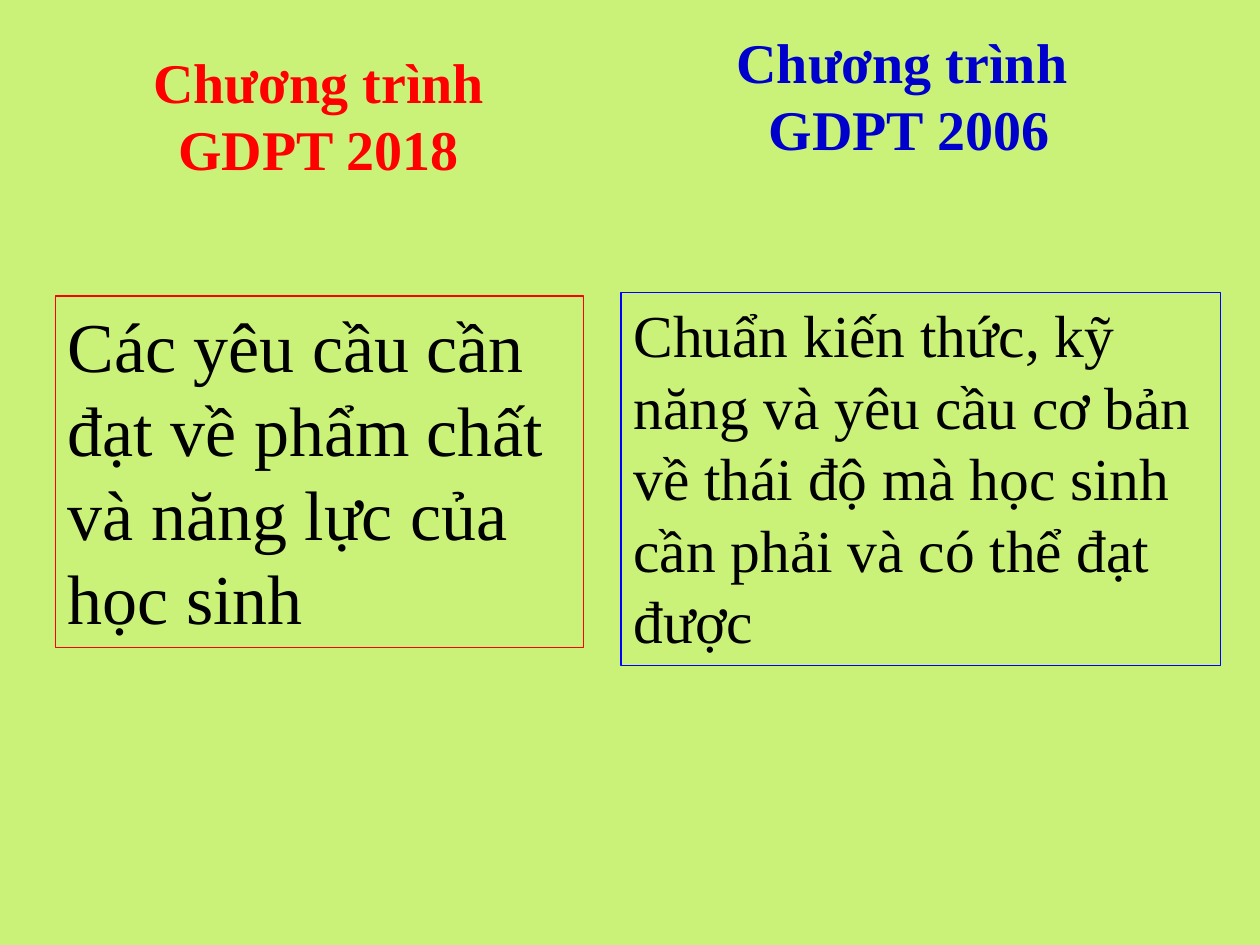
from pptx import Presentation
from pptx.dml.color import RGBColor
from pptx.enum import text
from pptx.util import Inches, Pt


def color(code):
    return RGBColor.from_string(code)


def write(box, lines, align, style):
    """Fill a box with one paragraph per line, all in the same style."""
    frame = box.text_frame
    frame.word_wrap = True
    frame.auto_size = text.MSO_AUTO_SIZE.SHAPE_TO_FIT_TEXT
    frame.vertical_anchor = text.MSO_ANCHOR.TOP
    frame.text = "\n".join(lines)
    for para in frame.paragraphs:
        para.alignment = align
        font = para.runs[0].font
        font.color.rgb = color(style["color"])
        for name in ("size", "bold"):
            setattr(font, name, style[name])
        font.name = "Times New Roman"


deck = Presentation()
deck.slide_width, deck.slide_height = Inches(10), Inches(7.5)
slide = deck.slides.add_slide(deck.slide_layouts[6])
slide.background.fill.solid()
slide.background.fill.fore_color.rgb = color("CAF278")

bodies = [
    ((0.44, 2.35, 4.19, 2.79), "FF0000", 40,
     "Các yêu cầu cần đạt về phẩm chất và năng lực của học sinh"),
    ((4.93, 2.32, 4.76, 2.96), "0000FF", 34,
     "Chuẩn kiến thức, kỹ năng và yêu cầu cơ bản về thái độ mà học sinh "
     "cần phải và có thể đạt được"),
]
for place, edge, size, words in bodies:
    box = slide.shapes.add_textbox(*map(Inches, place))
    box.line.color.rgb = color(edge)
    box.line.width = Pt(0.75)
    write(box, [words], text.PP_ALIGN.LEFT,
          {"size": Pt(size), "bold": False, "color": "000000"})

heads = [
    ((0.47, 0.33, 4.12, 1.72), "FF0000", ["Chương trình", "GDPT 2018"]),
    ((5.12, 0.17, 4.19, 1.18), "0000CC", ["Chương trình ", "GDPT 2006"]),
]
for place, ink, lines in heads:
    box = slide.shapes.add_textbox(*map(Inches, place))
    write(box, lines, text.PP_ALIGN.CENTER,
          {"size": Pt(32), "bold": True, "color": ink})

deck.save("out.pptx")
